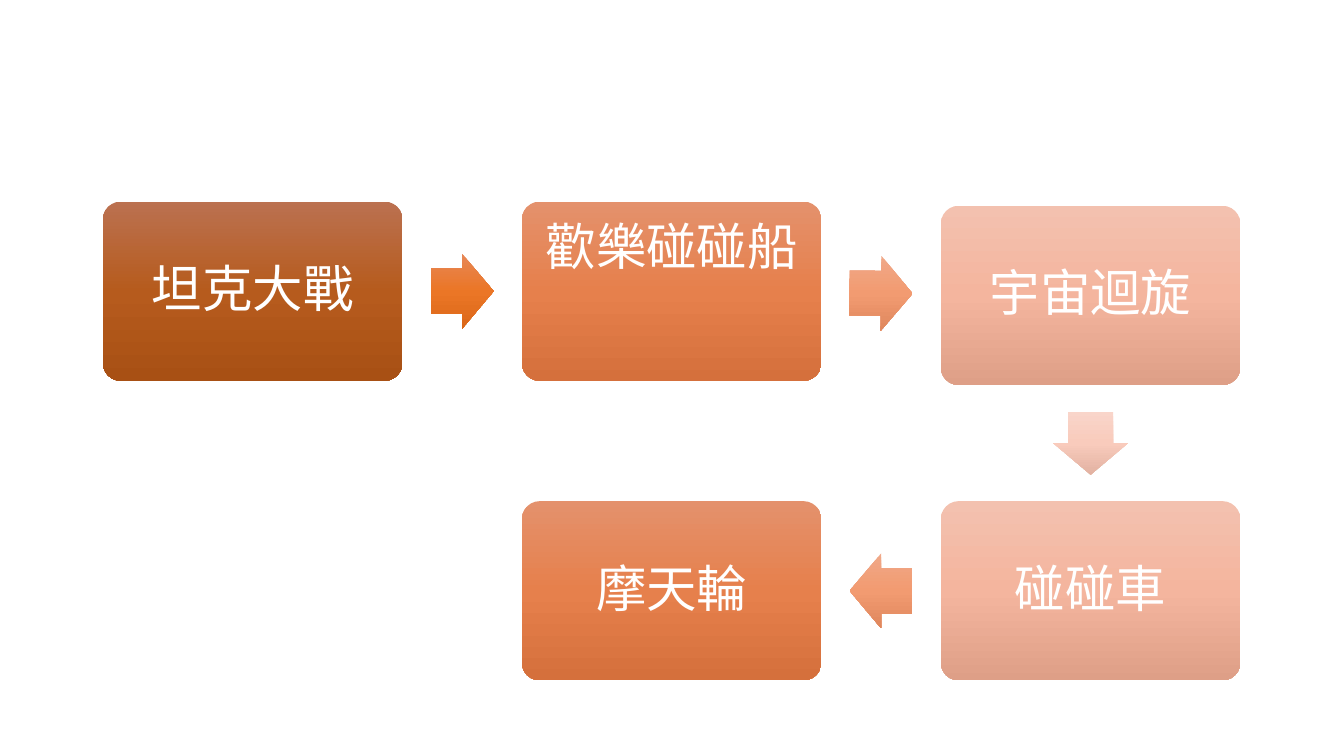
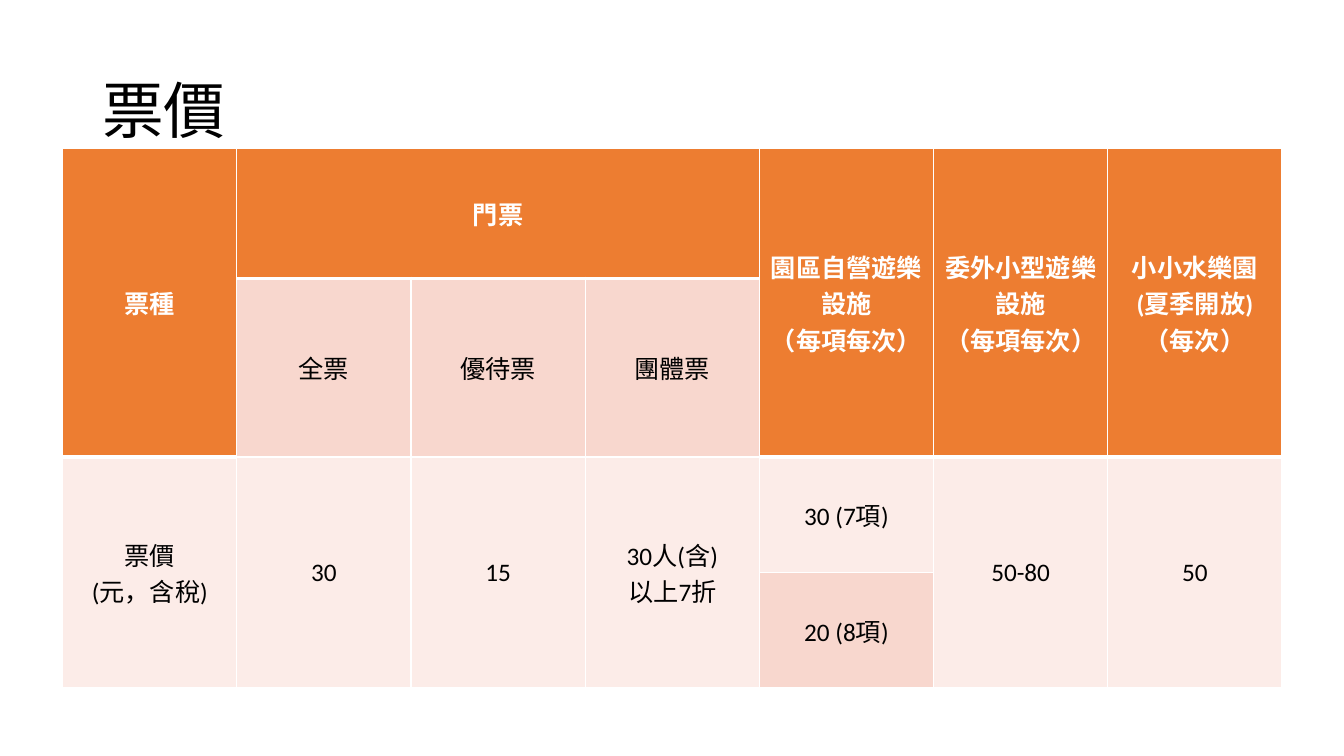
from copy import deepcopy
from math import atan2, degrees

from lxml.etree import SubElement
from pptx import Presentation
from pptx.dml.color import RGBColor
from pptx.enum.shapes import MSO_SHAPE
from pptx.enum.text import MSO_ANCHOR, PP_ALIGN
from pptx.oxml.ns import qn
from pptx.util import Pt

FONT = "Calibri"
WHITE, BLACK = "FFFFFF", "000000"
HEADER, BAND, PALE = "ED7D31", "F8D7CE", "FCECE8"

BROWN = ("BB7150", "B65B1D", "A85014")
ORANGE = ("E4916C", "E6804C", "D5703C")
PINK = ("F3C1AF", "F4B59E", "DE9F87")
ARROW_DARK = ("E78756", "EB7626", "DB6718")
ARROW_MID = ("F0A888", "F29B71", "DF875D")
ARROW_LIGHT = ("F9D5CA", "F9CBBC", "E2B2A2")

BOX_W, BOX_H = 214, 128
ARROW_W, ARROW_H = 45, 53.5

# Each ride: name, column, row, downward shift, colours, anchor
RIDES = [
    ("坦克大戰", 0, 0, 0, BROWN, MSO_ANCHOR.MIDDLE),
    ("歡樂碰碰船", 1, 0, 0, ORANGE, MSO_ANCHOR.TOP),
    ("宇宙迴旋", 2, 0, 3, PINK, MSO_ANCHOR.MIDDLE),
    ("碰碰車", 2, 1, 0, PINK, MSO_ANCHOR.MIDDLE),
    ("摩天輪", 1, 1, 0, ORANGE, MSO_ANCHOR.MIDDLE),
]
ARROWS = [ARROW_DARK, ARROW_MID, ARROW_LIGHT, ARROW_MID]

ROW_HEIGHTS = [93, 127.5, 82.5, 82.5]
PRICES = [
    (0, 0, 2, 1, "票種", HEADER),
    (0, 1, 1, 3, "門票", HEADER),
    (0, 4, 2, 1, "園區自營遊樂設施\n（每項每次）", HEADER),
    (0, 5, 2, 1, "委外小型遊樂設施\n（每項每次）", HEADER),
    (0, 6, 2, 1, "小小水樂園\n(夏季開放)\n（每次）", HEADER),
    (1, 1, 1, 1, "全票", BAND),
    (1, 2, 1, 1, "優待票", BAND),
    (1, 3, 1, 1, "團體票", BAND),
    (2, 0, 2, 1, "票價\n(元，含稅)", PALE),
    (2, 1, 2, 1, "30", PALE),
    (2, 2, 2, 1, "15", PALE),
    (2, 3, 2, 1, "30人(含)\n以上7折", PALE),
    (2, 4, 1, 1, "30 (7項)", PALE),
    (3, 4, 1, 1, "20 (8項)", BAND),
    (2, 5, 2, 1, "50-80", PALE),
    (2, 6, 2, 1, "50", PALE),
]


def rgb(value):
    """Turn a hex string into a colour."""
    return RGBColor.from_string(value)


def write(tf, text, size, color, align=PP_ALIGN.CENTER, bold=False, spacing=1.0):
    """Set the text of a frame and format every run."""
    tf.word_wrap = True
    tf.text = text
    for p in tf.paragraphs:
        p.alignment = align
        p.line_spacing = spacing
        for r in p.runs:
            r.font.name = FONT
            r.font.size = Pt(size)
            r.font.bold = bold
            r.font.color.rgb = rgb(color)


def add_block(s, kind, x, y, w, h, colors, adjustments):
    """Add a borderless shape with an upright three-stop gradient."""
    sp = s.shapes.add_shape(kind, Pt(x), Pt(y), Pt(w), Pt(h))
    sp.shadow.inherit = False
    sp.line.fill.background()
    for i, value in enumerate(adjustments):
        sp.adjustments[i] = value
    sp.fill.gradient()
    sp.fill.gradient_angle = 270
    grad = sp.element.spPr.find(qn("a:gradFill"))
    grad.set("rotWithShape", "0")
    stops = grad.find(qn("a:gsLst"))
    stops.insert(1, deepcopy(stops[0]))
    for stop, position, color in zip(sp.fill.gradient_stops, (0, 0.5, 1), colors):
        stop.position = position
        stop.color.rgb = rgb(color)
    return sp


def add_ride(s, x, y, name, colors, anchor):
    """Add one ride box with its name."""
    sp = add_block(s, MSO_SHAPE.ROUNDED_RECTANGLE, x, y, BOX_W, BOX_H, colors, [0.1])
    tf = sp.text_frame
    tf.margin_left = tf.margin_right = tf.margin_top = tf.margin_bottom = Pt(10.8)
    tf.vertical_anchor = anchor
    write(tf, name, 36, WHITE, spacing=0.9)


def add_arrow(s, start, end, colors):
    """Add a block arrow halfway between two box corners, turned to the second."""
    x = (start[0] + end[0] + BOX_W - ARROW_W) / 2
    y = (start[1] + end[1] + BOX_H - ARROW_H) / 2
    sp = add_block(s, MSO_SHAPE.RIGHT_ARROW, x, y, ARROW_W, ARROW_H, colors, [0.6, 0.5])
    sp.rotation = degrees(atan2(end[1] - start[1], end[0] - start[0]))


def add_route(s, x, y, w, h):
    """Place the rides on a three by two grid and join them with arrows."""
    step_x, step_y = (w - BOX_W) / 2, h - BOX_H
    corners = []
    for name, col, row, shift, colors, anchor in RIDES:
        corner = (x + col * step_x, y + row * step_y + shift)
        add_ride(s, *corner, name, colors, anchor)
        corners.append(corner)
    for start, end, colors in zip(corners, corners[1:], ARROWS):
        add_arrow(s, start, end, colors)


def add_title(s, x, y, w, h, text):
    """Add a slide title."""
    tf = s.shapes.add_textbox(Pt(x), Pt(y), Pt(w), Pt(h)).text_frame
    tf.vertical_anchor = MSO_ANCHOR.MIDDLE
    write(tf, text, 44, BLACK, PP_ALIGN.LEFT, spacing=0.9)


def set_borders(cell, bottom):
    """Draw white side borders and a bottom border of the given width."""
    props = cell._tc.get_or_add_tcPr()
    for i, (side, width) in enumerate((("lnL", 1), ("lnR", 1), ("lnB", bottom))):
        line = props.makeelement(qn("a:" + side), {"w": str(Pt(width))})
        fill = SubElement(line, qn("a:solidFill"))
        SubElement(fill, qn("a:srgbClr"), val=WHITE)
        props.insert(i, line)


def add_prices(s, x, y, w):
    """Add the ticket price table."""
    h = sum(ROW_HEIGHTS)
    table = s.shapes.add_table(len(ROW_HEIGHTS), 7, Pt(x), Pt(y), Pt(w), Pt(h)).table
    table.first_row = table.horz_banding = False
    for col in table.columns:
        col.width = Pt(w / 7)
    for row, height in zip(table.rows, ROW_HEIGHTS):
        row.height = Pt(height)
    for top, left, rows, cols, text, color in PRICES:
        is_header = color == HEADER
        for i in range(top, top + rows):
            for j in range(left, left + cols):
                cell = table.cell(i, j)
                cell.fill.solid()
                cell.fill.fore_color.rgb = rgb(color)
                set_borders(cell, 3 if is_header else 1)
        cell = table.cell(top, left)
        if rows * cols > 1:
            cell.merge(table.cell(top + rows - 1, left + cols - 1))
        cell.vertical_anchor = MSO_ANCHOR.MIDDLE
        cell.margin_left = cell.margin_right = Pt(2.2)
        cell.margin_top = cell.margin_bottom = Pt(2.2)
        write(cell.text_frame, text, 18, WHITE if is_header else BLACK, bold=is_header)


def main():
    """Build both slides and save them."""
    prs = Presentation()
    prs.slide_width, prs.slide_height = Pt(960), Pt(540)
    blank = prs.slide_layouts[6]
    add_route(prs.slides.add_slide(blank), 73.5, 144, 812.5, 342)
    s = prs.slides.add_slide(blank)
    add_title(s, 66, 28.8, 828, 104.4, "票價")
    add_prices(s, 44.8, 106, 871)
    prs.save("out.pptx")


if __name__ == "__main__":
    main()
